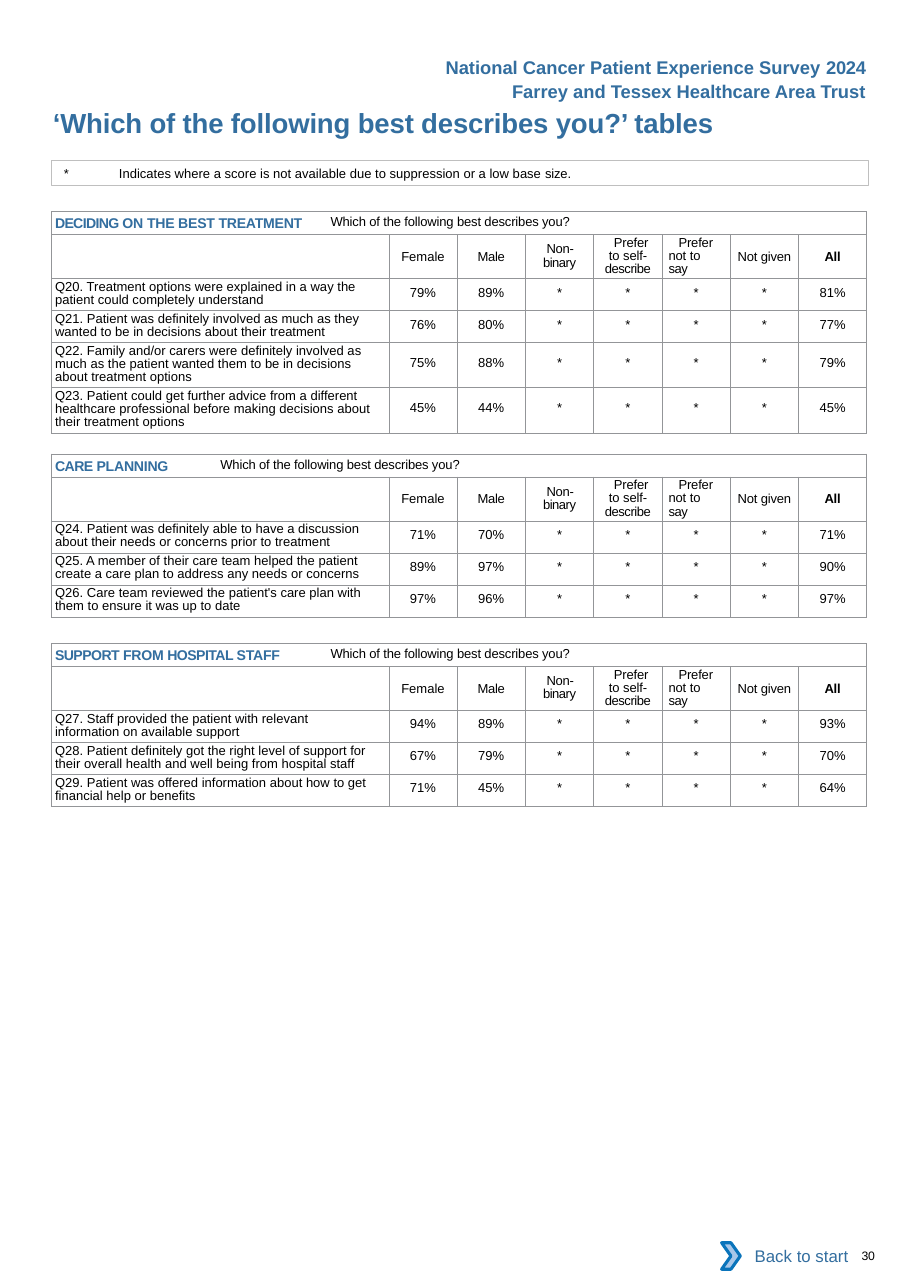
import pptx
import pptx.util
import pptx.dml.color
import pptx.enum.shapes
import pptx.enum.text
import pptx.oxml
import pptx.oxml.ns

Inches = pptx.util.Inches
Pt = pptx.util.Pt
ALIGN = pptx.enum.text.PP_ALIGN
ANCHOR = pptx.enum.text.MSO_ANCHOR
SHAPES = pptx.enum.shapes.MSO_SHAPE
RGBColor = pptx.dml.color.RGBColor

BLUE = RGBColor(0x33, 0x6E, 0x9F)
BLACK = RGBColor(0, 0, 0)
WHITE = RGBColor(0xFF, 0xFF, 0xFF)
NOTE_BORDER = RGBColor(0xBF, 0xBF, 0xBF)
CHEVRON_FILL = RGBColor(0xA8, 0xC7, 0xE9)
CHEVRON_LINE = RGBColor(0x0A, 0x74, 0xBB)
TABLE_BORDER = RGBColor(0x93, 0x95, 0x98)

QUESTION_WIDTH, VALUE_WIDTH = 3.06, 0.62
TITLE_ROW, HEADING_ROW = 0.21, 0.4

# Text runs with letter spacing, alignment, left / first-line / right indent, space before, line spacing
HEADINGS = [
    ([("Female", 0)], ALIGN.CENTER, (0, 0, 0), 8.3, None),
    ([("Male", -0.2)], ALIGN.CENTER, (0, 0, 0), 8.3, None),
    ([("Non- ", -0.2), ("binary", -0.3)], ALIGN.CENTER, (0.15, 0.01, 0.15), 5.6, 8.6),
    ([("Prefer ", -0.1), ("to ", 0), ("self- ", -0.1), ("describe", -0.3)],
     ALIGN.CENTER, (0.1, 0.06, 0.1), 1.3, 8.6),
    ([("Prefer not ", -0.1), ("to ", 0), ("say", -0.3)], ALIGN.LEFT, (0.06, 0.09, 0.1), 5.6, 8.6),
    ([("Not given", -0.1)], ALIGN.CENTER, (0, 0, 0), 8.3, None),
    ([("All", -0.2)], ALIGN.CENTER, (0, 0, 0), 8.3, None),
]

# Top, title runs, then rows: question, female, male, all, line count, right indent
TABLES = [
    (1.92, [("DECIDING ", -0.4), ("ON ", 0), ("THE BEST TREATMENT\t", -0.1)], [
        ("Q20. Treatment options were explained in a way the patient could completely understand",
         "79%", "89%", "81%", 2, 0.1),
        ("Q21. Patient was definitely involved as much as they wanted to be in decisions about "
         "their treatment", "76%", "80%", "77%", 2, 0.1),
        ("Q22. Family and/or carers were definitely involved as much as the patient wanted them "
         "to be in decisions about treatment options", "75%", "88%", "79%", 3, 0.2),
        ("Q23. Patient could get further advice from a different healthcare professional before "
         "making decisions about their treatment options", "45%", "44%", "45%", 3, 0.1),
    ]),
    (4.12, [("CARE ", -0.3), ("PLANNING\t", -0.1)], [
        ("Q24. Patient was definitely able to have a discussion about their needs or concerns "
         "prior to treatment", "71%", "70%", "71%", 2, 0.1),
        ("Q25. A member of their care team helped the patient create a care plan to address any "
         "needs or concerns", "89%", "97%", "90%", 2, 0.1),
        ("Q26. Care team reviewed the patient's care plan with them to ensure it was up to date",
         "97%", "96%", "97%", 2, 0.1),
    ]),
    (5.84, [("SUPPORT ", -0.3), ("FROM ", -0.1), ("HOSPITAL ", -0.3), ("STAFF\t", -0.1)], [
        ("Q27. Staff provided the patient with relevant information on available support",
         "94%", "89%", "93%", 2, 0.3),
        ("Q28. Patient definitely got the right level of support for their overall health and "
         "well being from hospital staff", "67%", "79%", "70%", 2, 0.1),
        ("Q29. Patient was offered information about how to get financial help or benefits",
         "71%", "45%", "64%", 2, 0.1),
    ]),
]


def add_runs(paragraph, runs, size=8.5, color=BLACK, bold=False, baseline=0):
    """Add (text, letter spacing in points) pairs in one style."""
    for text, spacing in runs:
        run = paragraph.add_run()
        run.text = text
        run.font.name = "Arial"
        run.font.size = Pt(size)
        run.font.bold = bold
        run.font.color.rgb = color
        properties = run.font._element
        if spacing:
            properties.set("spc", str(round(spacing * 100)))
        if baseline:
            properties.set("baseline", str(baseline * 1000))


def format_paragraph(paragraph, align=ALIGN.LEFT, indents=(0, 0, 0), before=0, line=None, tab=None):
    """Indents are left, first line and right, in inches; spacing is in points."""
    paragraph.alignment = align
    paragraph.space_before = Pt(before)
    if line:
        paragraph.line_spacing = Pt(line)
    properties = paragraph._p.get_or_add_pPr()
    for name, value in zip(("marL", "indent", "marR"), indents):
        properties.set(name, str(Inches(value)))
    if tab:
        properties.append(pptx.oxml.parse_xml(
            f'<a:tabLst {pptx.oxml.ns.nsdecls("a")}><a:tab pos="{Inches(tab)}" algn="l"/></a:tabLst>'))


presentation = pptx.Presentation()
presentation.slide_width = Inches(8.26)
presentation.slide_height = Inches(11.69)
slide = presentation.slides.add_slide(presentation.slide_layouts[6])

# Page header, title and page number
text_boxes = [
    ((3.92, 0.46, 4.04, 0.3), [("National Cancer Patient Experience Survey ", 0), ("2024", -0.2)],
     12, BLUE, True, ALIGN.RIGHT, 0, None),
    ((4.47, 0.68, 3.49, 0.3), [("Farrey and Tessex Healthcare Area Trust", 0)],
     12, BLUE, True, ALIGN.RIGHT, 0, None),
    ((0.47, 0.96, 6.25, 0.3), [("‘Which of the following best describes you?’ tables", -0.1)],
     18, BLUE, True, ALIGN.LEFT, 0.01, 0),
    ((7.72, 11.33, 0.51, 0.13), [("30", -0.2)], 8, BLACK, False, ALIGN.LEFT, 0.1, 0),
]
for place, runs, size, color, bold, align, left_indent, inset in text_boxes:
    frame = slide.shapes.add_textbox(*map(Inches, place)).text_frame
    frame.word_wrap = True
    if inset is not None:
        frame.margin_left = frame.margin_right = frame.margin_top = frame.margin_bottom = inset
    format_paragraph(frame.paragraphs[0], align, (left_indent, 0, 0))
    add_runs(frame.paragraphs[0], runs, size, color, bold)

# Suppression note
note = slide.shapes.add_shape(SHAPES.RECTANGLE, Inches(0.47), Inches(1.46), Inches(7.41), Inches(0.22))
note.shadow.inherit = False
note.fill.background()
note.line.color.rgb = NOTE_BORDER
note.line.width = Pt(0.5)
frame = note.text_frame
frame.word_wrap = True
frame.vertical_anchor = ANCHOR.TOP
frame.margin_left = frame.margin_right = 0
frame.margin_top = frame.margin_bottom = Inches(0.04)
format_paragraph(frame.paragraphs[0], indents=(0.11, 0, 0), before=9.1, tab=0.34)
add_runs(frame.paragraphs[0], [
    ("*", -0.5),
    ("\tIndicates where a score is not available due to suppression or a low base ", 0),
    ("size.", -0.1)])

# Score tables
for top, title_runs, questions in TABLES:
    heights = [TITLE_ROW, HEADING_ROW] + [0.29 if row[4] == 2 else 0.41 for row in questions]
    table = slide.shapes.add_table(
        len(heights), 8, Inches(0.47), Inches(top), Inches(7.41), Inches(sum(heights))).table
    table.first_row = table.horz_banding = False
    for row, height in zip(table.rows, heights):
        row.height = Inches(height)
    for index, column in enumerate(table.columns):
        column.width = Inches(VALUE_WIDTH if index else QUESTION_WIDTH)
    for cell in table.iter_cells():
        cell.margin_left = cell.margin_right = cell.margin_top = cell.margin_bottom = 0
        cell.fill.background()
        for position, side in enumerate(("lnL", "lnR", "lnT", "lnB")):
            cell._tc.tcPr.insert(position, pptx.oxml.parse_xml(
                f'<a:{side} {pptx.oxml.ns.nsdecls("a")} w="{Pt(0.5)}"><a:solidFill>'
                f'<a:srgbClr val="{TABLE_BORDER}"/></a:solidFill></a:{side}>'))

    title_cell = table.cell(0, 0)
    title_cell.merge(table.cell(0, 7))
    title_cell.vertical_anchor = ANCHOR.MIDDLE
    paragraph = title_cell.text_frame.paragraphs[0]
    format_paragraph(paragraph, indents=(0.03, 0, 0), line=11.8, tab=4.24)
    add_runs(paragraph, title_runs, 15.8, BLUE, True, baseline=-8)
    add_runs(paragraph, [("Which of the following best describes you?", -0.1)])

    for column, (runs, align, indents, before, line) in enumerate(HEADINGS, 1):
        cell = table.cell(1, column)
        cell.vertical_anchor = ANCHOR.MIDDLE
        paragraph = cell.text_frame.paragraphs[0]
        format_paragraph(paragraph, align, indents, before, line)
        add_runs(paragraph, runs, bold=column == 7)

    for row, (question, female, male, overall, lines, right) in enumerate(questions, 2):
        cell = table.cell(row, 0)
        cell.margin_top = Inches(0.02)
        paragraph = cell.text_frame.paragraphs[0]
        format_paragraph(paragraph, indents=(0.03, 0, right), before=1.6, line=8.6)
        add_runs(paragraph, [(question, 0)])
        for column, value in enumerate([female, male] + ["*"] * 4 + [overall], 1):
            cell = table.cell(row, column)
            cell.margin_top = Inches(0.06 if lines == 2 else 0.12)
            paragraph = cell.text_frame.paragraphs[0]
            format_paragraph(paragraph, ALIGN.CENTER, before=4.2 if lines == 2 else 8.6)
            add_runs(paragraph, [(value, 0)])

# Back to start button
button = slide.shapes.add_shape(SHAPES.RECTANGLE, Inches(6.62), Inches(11.19), Inches(1.18), Inches(0.42))
button.shadow.inherit = False
button.fill.solid()
button.fill.fore_color.rgb = WHITE
button.line.fill.background()
button.text_frame.word_wrap = True
button.text_frame.vertical_anchor = ANCHOR.MIDDLE
format_paragraph(button.text_frame.paragraphs[0], ALIGN.RIGHT)
add_runs(button.text_frame.paragraphs[0], [("Back to start", 0)], 11, BLUE)

chevron = slide.shapes.add_shape(SHAPES.CHEVRON, Inches(6.55), Inches(11.28), Inches(0.17), Inches(0.24))
chevron.shadow.inherit = False
chevron.fill.solid()
chevron.fill.fore_color.rgb = CHEVRON_FILL
chevron.line.color.rgb = CHEVRON_LINE
chevron.line.width = Pt(2)

presentation.save("out.pptx")
